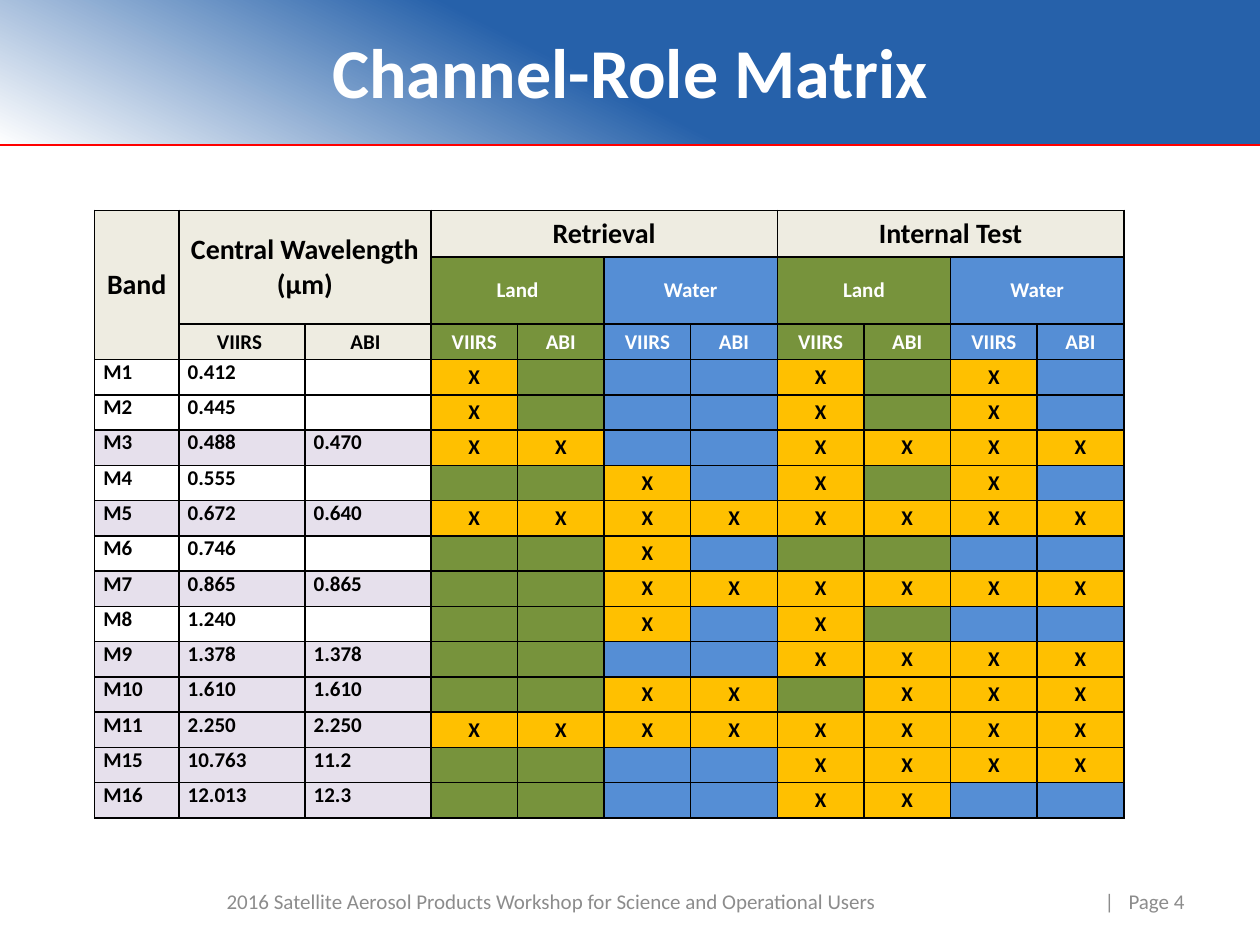
from lxml.etree import SubElement
from pptx import Presentation
from pptx.dml.color import RGBColor
from pptx.enum.shapes import MSO_CONNECTOR, MSO_SHAPE
from pptx.enum.text import MSO_ANCHOR, PP_ALIGN
from pptx.oxml.ns import qn
from pptx.util import Inches, Pt

FONT = "Calibri"
BLACK, WHITE, GREY = "000000", "FFFFFF", "8C8C8C"
BEIGE, LAVENDER, AMBER = "EEECE1", "E6E0EC", "FFC000"
GREEN, BLUE = "77933C", "558ED5"
SURFACES = [("Land", GREEN), ("Water", BLUE)] * 2
INSTRUMENTS = ["VIIRS", "ABI"]
FIRST_ROLE = 3  # column where the role marks start
HEADER_ROWS = 3

# Band, VIIRS and ABI wavelengths, then one mark per role column
BANDS = [
    ("M1", "0.412", "", "X...X.X."),
    ("M2", "0.445", "", "X...X.X."),
    ("M3", "0.488", "0.470", "XX..XXXX"),
    ("M4", "0.555", "", "..X.X.X."),
    ("M5", "0.672", "0.640", "XXXXXXXX"),
    ("M6", "0.746", "", "..X....."),
    ("M7", "0.865", "0.865", "..XXXXXX"),
    ("M8", "1.240", "", "..X.X..."),
    ("M9", "1.378", "1.378", "....XXXX"),
    ("M10", "1.610", "1.610", "..XX.XXX"),
    ("M11", "2.250", "2.250", "XXXXXXXX"),
    ("M15", "10.763", "11.2", "....XXXX"),
    ("M16", "12.013", "12.3", "....XX.."),
]
COLUMN_WIDTHS = [0.67, 1, 1] + [5.5 / 8] * 8
ROW_HEIGHTS = [0.37, 0.37] + [0.28] * (1 + len(BANDS))


def color(value):
    return RGBColor.from_string(value)


def style_para(para, size, ink, align, bold=False):
    para.alignment = align
    font = para.font
    font.name, font.size, font.bold = FONT, Pt(size), bold
    font.color.rgb = color(ink)


def add_text(page, text, left, top, width, height, size, ink, align, bold=False):
    box = page.shapes.add_textbox(Inches(left), Inches(top), Inches(width), Inches(height))
    frame = box.text_frame
    frame.word_wrap = True
    frame.vertical_anchor = MSO_ANCHOR.MIDDLE
    frame.text = text
    style_para(frame.paragraphs[0], size, ink, align, bold)


def add_banner(page):
    banner = page.shapes.add_shape(
        MSO_SHAPE.RECTANGLE, Inches(-0.01), Inches(-0.02), Inches(10.02), Inches(1.17))
    banner.shadow.inherit = False
    banner.line.fill.background()
    banner.fill.gradient()
    banner.fill.gradient_angle = 63
    stops = [(0, WHITE), (0.47, "2661AA")]
    for stop, (position, tint) in zip(banner.fill.gradient_stops, stops):
        stop.position = position
        stop.color.rgb = color(tint)


def add_rule(page):
    rule = page.shapes.add_connector(
        MSO_CONNECTOR.STRAIGHT, Inches(0), Inches(1.15), Inches(10), Inches(1.15))
    rule.line.color.rgb = color("FF0000")
    rule.line.width = Pt(1.25)
    SubElement(rule.element.spPr, qn("a:effectLst"))


def add_borders(cell):
    properties = cell._tc.get_or_add_tcPr()
    for side in ("a:lnL", "a:lnR", "a:lnT", "a:lnB"):
        line = SubElement(properties, qn(side), w=str(Pt(1)))
        SubElement(SubElement(line, qn("a:solidFill")), qn("a:srgbClr"), val=BLACK)


def fill_cell(cell, text, fill, ink=BLACK, size=12, align=PP_ALIGN.CENTER,
              anchor=MSO_ANCHOR.MIDDLE):
    cell.margin_left = cell.margin_right = Inches(0.07)
    cell.margin_top = cell.margin_bottom = 0
    cell.vertical_anchor = anchor
    cell.fill.solid()
    cell.fill.fore_color.rgb = color(fill)
    cell.text = text
    para = cell.text_frame.paragraphs[0]
    style_para(para, size, ink, align, bold=True)
    if not text:  # keeps an empty cell from growing its row
        SubElement(para._p, qn("a:endParaRPr"), sz=str(size * 100))


def fill_header(table):
    headings = [
        ("Band", 0, 2, 0),
        ("Central Wavelength (µm)", 1, 1, 2),
        ("Retrieval", 3, 0, 6),
        ("Internal Test", 7, 0, 10),
    ]
    for text, first_column, last_row, last_column in headings:
        fill_cell(table.cell(0, first_column), text, BEIGE, size=16)
        table.cell(0, first_column).merge(table.cell(last_row, last_column))
    for column, instrument in enumerate(INSTRUMENTS, start=1):
        fill_cell(table.cell(2, column), instrument + " ", BEIGE)
    for group, (surface, tint) in enumerate(SURFACES):
        left = FIRST_ROLE + 2 * group
        fill_cell(table.cell(1, left), surface, tint, WHITE)
        table.cell(1, left).merge(table.cell(1, left + 1))
        for offset, instrument in enumerate(INSTRUMENTS):
            fill_cell(table.cell(2, left + offset), instrument, tint, WHITE)


def fill_bands(table):
    for row, (band, viirs, abi, marks) in enumerate(BANDS, start=HEADER_ROWS):
        for column, text in enumerate((band, viirs, abi)):
            fill_cell(table.cell(row, column), text, LAVENDER if abi else WHITE,
                      align=PP_ALIGN.JUSTIFY, anchor=MSO_ANCHOR.TOP)
        for role, mark in enumerate(marks):
            cell = table.cell(row, FIRST_ROLE + role)
            if mark == "X":
                fill_cell(cell, mark, AMBER)
            else:
                fill_cell(cell, "", SURFACES[role // 2][1])


def add_matrix(page):
    frame = page.shapes.add_table(
        len(ROW_HEIGHTS), len(COLUMN_WIDTHS), Inches(0.75), Inches(1.67),
        Inches(sum(COLUMN_WIDTHS)), Inches(sum(ROW_HEIGHTS)))
    table = frame.table
    table.first_row = table.horz_banding = False
    for column, width in zip(table.columns, COLUMN_WIDTHS):
        column.width = Inches(width)
    for row, height in zip(table.rows, ROW_HEIGHTS):
        row.height = Inches(height)
    for cell in table.iter_cells():
        add_borders(cell)
    fill_header(table)
    fill_bands(table)


def main():
    deck = Presentation()
    deck.slide_width, deck.slide_height = Inches(10), Inches(7.5)
    page = deck.slides.add_slide(deck.slide_layouts[6])
    add_banner(page)
    add_rule(page)
    add_text(page, "Channel-Role Matrix", 1, 0.17, 8, 0.78, 40, WHITE,
             PP_ALIGN.CENTER, bold=True)
    add_text(page, "|   Page 4", 8.5, 6.95, 1, 0.4, 12, GREY, PP_ALIGN.RIGHT)
    add_matrix(page)
    add_text(page, "2016 Satellite Aerosol Products Workshop for Science and Operational Users",
             0.5, 6.95, 7.75, 0.4, 12, GREY, PP_ALIGN.CENTER)
    deck.save("out.pptx")


if __name__ == "__main__":
    main()
